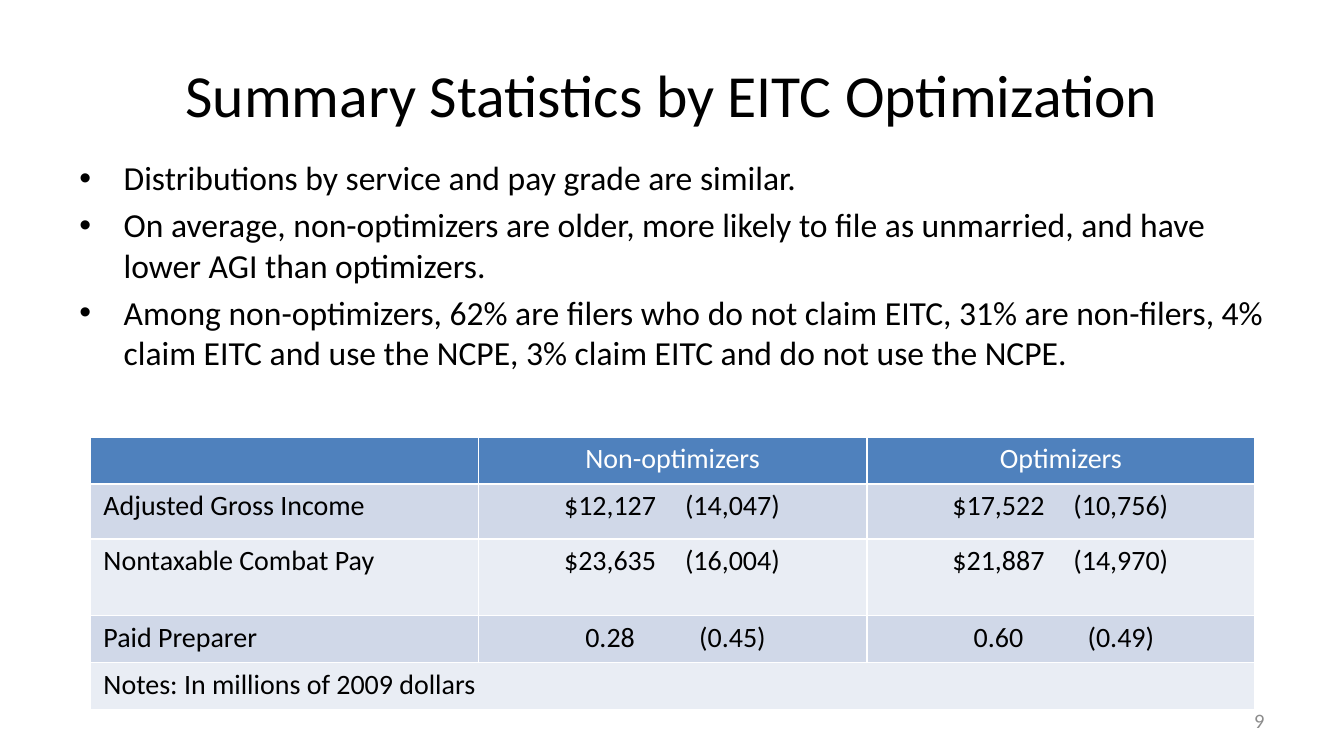
from lxml import etree
from pptx import Presentation
from pptx.dml.color import RGBColor
from pptx.enum.text import MSO_ANCHOR, MSO_AUTO_SIZE, PP_ALIGN
from pptx.oxml.ns import qn
from pptx.util import Inches, Pt

LEFT, CENTER, RIGHT = PP_ALIGN.LEFT, PP_ALIGN.CENTER, PP_ALIGN.RIGHT
MIDDLE = MSO_ANCHOR.MIDDLE
FONT = "Calibri"
BLACK, WHITE, GRAY = "000000", "FFFFFF", "8C8C8C"
HEADER_FILL, BANDS = "4F81BD", ("D0D8E8", "E9EDF4")
CELL_SIZE = 15
TAB_STOPS = (0.88, 1.79)  # centres of the mean and the deviation in a cell

FINDINGS = [
    "Distributions by service and pay grade are similar.",
    "On average, non-optimizers are older, more likely to file as unmarried, "
    "and have lower AGI than optimizers.",
    "Among non-optimizers, 62% are filers who do not claim EITC, 31% are "
    "non-filers, 4% claim EITC and use the NCPE, 3% claim EITC and do not use "
    "the NCPE.",
]
GROUPS = ["", "Non-optimizers", "Optimizers"]
STATISTICS = [
    ("Adjusted Gross Income", ("$12,127", "(14,047)"), ("$17,522", "(10,756)")),
    ("Nontaxable Combat Pay", ("$23,635", "(16,004)"), ("$21,887", "(14,970)")),
    ("Paid Preparer", ("0.28", "(0.45)"), ("0.60", "(0.49)")),
]
NOTE = "Notes: In millions of 2009 dollars"
ROW_HEIGHTS = (0.35, 0.41, 0.57, 0.35, 0.35)
COLUMN_WIDTH = 2.89


def rgb(value):
    return RGBColor.from_string(value)


def add_text(paragraph, text, size, color=BLACK, align=LEFT):
    paragraph.alignment = align
    run = paragraph.add_run()
    run.text = text
    run.font.name = FONT
    run.font.size = Pt(size)
    run.font.color.rgb = rgb(color)


def place(shape, left, top, width, height):
    shape.left, shape.top = Inches(left), Inches(top)
    shape.width, shape.height = Inches(width), Inches(height)
    frame = shape.text_frame
    frame.word_wrap = True
    frame.auto_size = MSO_AUTO_SIZE.NONE
    frame.margin_left = frame.margin_right = Inches(0.09)
    frame.margin_top = frame.margin_bottom = Inches(0.04)


def add_title(slide, text):
    title = slide.shapes.title
    place(title, 0.5, 0.23, 9, 0.94)
    title.text_frame.vertical_anchor = MIDDLE
    add_text(title.text_frame.paragraphs[0], text, 32, align=CENTER)


def add_findings(slide, findings):
    body = slide.placeholders[1]
    place(body, 0.5, 1.13, 9, 2.06)
    for index, finding in enumerate(findings):
        frame = body.text_frame
        paragraph = frame.add_paragraph() if index else frame.paragraphs[0]
        add_text(paragraph, finding, 18)
        properties = paragraph._p.get_or_add_pPr()
        properties.set("marL", str(Inches(0.33)))
        properties.set("indent", str(-Inches(0.33)))


def add_page_number(slide, number):
    box = slide.shapes.add_textbox(0, 0, 0, 0)
    place(box, 7.17, 5.21, 2.33, 0.3)
    box.text_frame.vertical_anchor = MIDDLE
    add_text(box.text_frame.paragraphs[0], number, 11, GRAY, RIGHT)


def add_tab_stops(paragraph):
    tabs = etree.SubElement(paragraph._p.get_or_add_pPr(), qn("a:tabLst"))
    for stop in TAB_STOPS:
        etree.SubElement(tabs, qn("a:tab"), pos=str(Inches(stop)), algn="ctr")


def style_cell(cell, fill):
    cell.margin_left = cell.margin_right = Inches(0.1)
    cell.margin_top = cell.margin_bottom = Inches(0.04)
    # Borders come before the fill in the cell properties
    properties = cell._tc.get_or_add_tcPr()
    for side in ("a:lnL", "a:lnR", "a:lnT", "a:lnB"):
        line = etree.SubElement(properties, qn(side), w=str(Pt(1)))
        solid = etree.SubElement(line, qn("a:solidFill"))
        etree.SubElement(solid, qn("a:srgbClr"), val=WHITE)
    cell.fill.solid()
    cell.fill.fore_color.rgb = rgb(fill)
    # Empty cells need the small size too, or their rows grow
    etree.SubElement(cell.text_frame.paragraphs[0]._p, qn("a:endParaRPr"),
                     sz=str(CELL_SIZE * 100))


def fill_cell(cell, content, color=BLACK, align=LEFT):
    paragraph = cell.text_frame.paragraphs[0]
    if isinstance(content, tuple):
        add_text(paragraph, "\t" + "\t".join(content), CELL_SIZE, color)
        add_tab_stops(paragraph)
    elif content:
        add_text(paragraph, content, CELL_SIZE, color, align)


def add_statistics_table(slide):
    rows, columns = len(ROW_HEIGHTS), len(GROUPS)
    table = slide.shapes.add_table(
        rows, columns, Inches(0.67), Inches(3.25),
        Inches(COLUMN_WIDTH * columns), Inches(sum(ROW_HEIGHTS))).table
    for column in table.columns:
        column.width = Inches(COLUMN_WIDTH)
    for index, height in enumerate(ROW_HEIGHTS):
        table.rows[index].height = Inches(height)
        fill = BANDS[(index - 1) % 2] if index else HEADER_FILL
        for cell in table.rows[index].cells:
            style_cell(cell, fill)

    # Header, statistics, then the note across the last row
    for column, group in enumerate(GROUPS):
        fill_cell(table.cell(0, column), group, WHITE, CENTER)
    for row, statistic in enumerate(STATISTICS, start=1):
        for column, content in enumerate(statistic):
            fill_cell(table.cell(row, column), content)
    note = table.cell(rows - 1, 0)
    note.merge(table.cell(rows - 1, columns - 1))
    fill_cell(note, NOTE)


def main():
    presentation = Presentation()
    # Widescreen, 16:9
    presentation.slide_width = Inches(10)
    presentation.slide_height = Inches(10 * 9 / 16)
    slide = presentation.slides.add_slide(presentation.slide_layouts[1])
    add_title(slide, "Summary Statistics by EITC Optimization")
    add_findings(slide, FINDINGS)
    add_page_number(slide, "9")
    add_statistics_table(slide)
    presentation.save("out.pptx")


if __name__ == "__main__":
    main()
